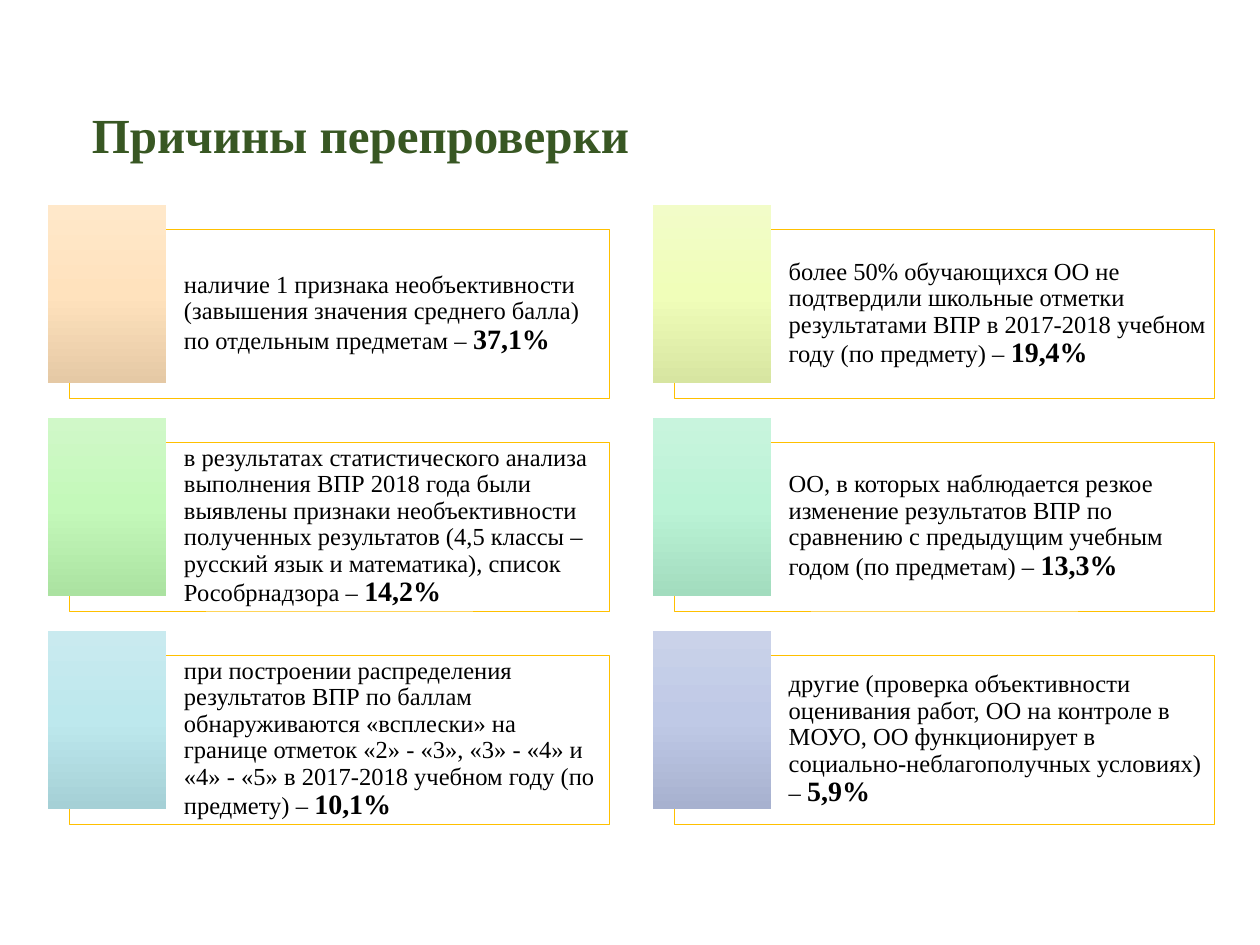
from lxml import etree
from pptx import Presentation
from pptx.dml.color import RGBColor
from pptx.enum.shapes import MSO_SHAPE
from pptx.enum.text import MSO_ANCHOR, PP_ALIGN
from pptx.oxml.ns import qn
from pptx.util import Inches, Pt

RECTANGLE = MSO_SHAPE.RECTANGLE
MIDDLE = MSO_ANCHOR.MIDDLE
LEFT = PP_ALIGN.LEFT

WHITE = RGBColor(0xFF, 0xFF, 0xFF)
BLACK = RGBColor(0x00, 0x00, 0x00)
GREEN = RGBColor(0x38, 0x57, 0x23)
GOLD = RGBColor(0xFF, 0xC0, 0x00)
PEACH = [RGBColor(0xFF, 0xE8, 0xCA), RGBColor(0xFF, 0xE2, 0xBD), RGBColor(0xE5, 0xC9, 0xA5)]
LIME = [RGBColor(0xF2, 0xFC, 0xC8), RGBColor(0xF0, 0xFE, 0xB9), RGBColor(0xD7, 0xE5, 0xA1)]
LEAF = [RGBColor(0xD0, 0xF8, 0xC8), RGBColor(0xC4, 0xF9, 0xBA), RGBColor(0xAB, 0xE2, 0xA1)]
MINT = [RGBColor(0xC8, 0xF4, 0xDD), RGBColor(0xBB, 0xF3, 0xD6), RGBColor(0xA2, 0xDC, 0xBE)]
AQUA = [RGBColor(0xC9, 0xEA, 0xEF), RGBColor(0xBD, 0xE8, 0xED), RGBColor(0xA5, 0xD0, 0xD6)]
LAVENDER = [RGBColor(0xCA, 0xD2, 0xE9), RGBColor(0xBF, 0xC9, 0xE6), RGBColor(0xA7, 0xB1, 0xCF)]

REASONS = [
    ("наличие 1 признака необъективности (завышения значения среднего балла) "
     "по отдельным предметам – ", "37,1%", PEACH),
    ("более 50% обучающихся ОО не подтвердили школьные отметки результатами ВПР "
     "в 2017-2018 учебном году (по предмету) – ", "19,4%", LIME),
    ("в результатах статистического анализа выполнения ВПР 2018 года были выявлены "
     "признаки необъективности полученных результатов (4,5 классы – русский язык "
     "и математика), список Рособрнадзора – ", "14,2%", LEAF),
    ("ОО, в которых наблюдается резкое изменение результатов ВПР по сравнению "
     "с предыдущим учебным годом (по предметам) – ", "13,3%", MINT),
    ("при построении распределения результатов ВПР по баллам обнаруживаются "
     "«всплески» на границе отметок «2» - «3», «3» - «4» и «4» - «5» "
     "в 2017-2018 учебном году (по предмету) – ", "10,1%", AQUA),
    ("другие (проверка объективности оценивания работ, ОО на контроле в МОУО, "
     "ОО функционирует в социально-неблагополучных условиях) – ", "5,9%", LAVENDER),
]
COLUMNS = 2
COLUMN_STEP, ROW_STEP = 4.8, 1.69
PANEL_LEFT, PANEL_TOP = 0.55, 1.82
TILE_LEFT, TILE_TOP = 0.38, 1.63


class SlideBuilder:
    font_name = "Times New Roman"
    line_spacing = 0.9
    panel_margins = {"margin_left": Inches(0.91), "margin_top": Inches(0.06),
                     "margin_right": Inches(0.06), "margin_bottom": Inches(0.06)}

    def __init__(self, slide):
        self.slide = slide

    def add_text(self, shape, runs, color):
        """Fill the shape with one paragraph of (text, size, bold) runs."""
        frame = shape.text_frame
        frame.word_wrap = True
        frame.vertical_anchor = MIDDLE
        paragraph = frame.paragraphs[0]
        paragraph.alignment = LEFT
        paragraph.line_spacing = self.line_spacing
        for text, size, bold in runs:
            run = paragraph.add_run()
            run.text = text
            run.font.color.rgb = color
            formats = {"name": self.font_name, "size": Pt(size), "bold": bold}
            for name, value in formats.items():
                setattr(run.font, name, value)

    def title(self, text, left, top, width, height):
        box = self.slide.shapes.add_textbox(
            Inches(left), Inches(top), Inches(width), Inches(height))
        self.add_text(box, [(text, 28, True)], GREEN)

    def rectangle(self, left, top, width, height):
        shape = self.slide.shapes.add_shape(
            RECTANGLE, Inches(left), Inches(top), Inches(width), Inches(height))
        shape.shadow.inherit = False
        return shape

    def panel(self, left, top, text, share):
        """Add an outlined, partly transparent panel with a reason and its share."""
        shape = self.rectangle(left, top, 4.29, 1.34)
        shape.fill.solid()
        shape.fill.fore_color.rgb = WHITE
        color = shape._element.spPr.find(qn("a:solidFill"))[0]
        etree.SubElement(color, qn("a:alpha"), val="40000")
        shape.line.color.rgb = GOLD
        shape.line.width = Pt(0.5)
        for name, value in self.panel_margins.items():
            setattr(shape.text_frame, name, value)
        self.add_text(shape, [(text, 14, False), (share, 16, True)], BLACK)

    def tile(self, left, top, colors):
        """Add a borderless tile shaded evenly from top to bottom."""
        shape = self.rectangle(left, top, 0.94, 1.41)
        shape.line.fill.background()
        shape.fill.gradient()
        shape.fill.gradient_angle = 270
        stops = shape._element.spPr.find(qn("a:gradFill")).find(qn("a:gsLst"))
        for stop in list(stops):
            stops.remove(stop)
        for index, color in enumerate(colors):
            position = index * 100000 // (len(colors) - 1)
            stop = etree.SubElement(stops, qn("a:gs"), pos=str(position))
            etree.SubElement(stop, qn("a:srgbClr"), val=str(color))


def main():
    presentation = Presentation()
    presentation.slide_width = Inches(10)
    presentation.slide_height = Inches(7.5)
    builder = SlideBuilder(presentation.slides.add_slide(presentation.slide_layouts[6]))

    builder.title("Причины перепроверки", 0.63, 0.36, 8.62, 1.46)
    for index, (text, share, colors) in enumerate(REASONS):
        row, column = divmod(index, COLUMNS)
        across, down = column * COLUMN_STEP, row * ROW_STEP
        builder.panel(PANEL_LEFT + across, PANEL_TOP + down, text, share)
        builder.tile(TILE_LEFT + across, TILE_TOP + down, colors)

    presentation.save("out.pptx")


if __name__ == "__main__":
    main()
